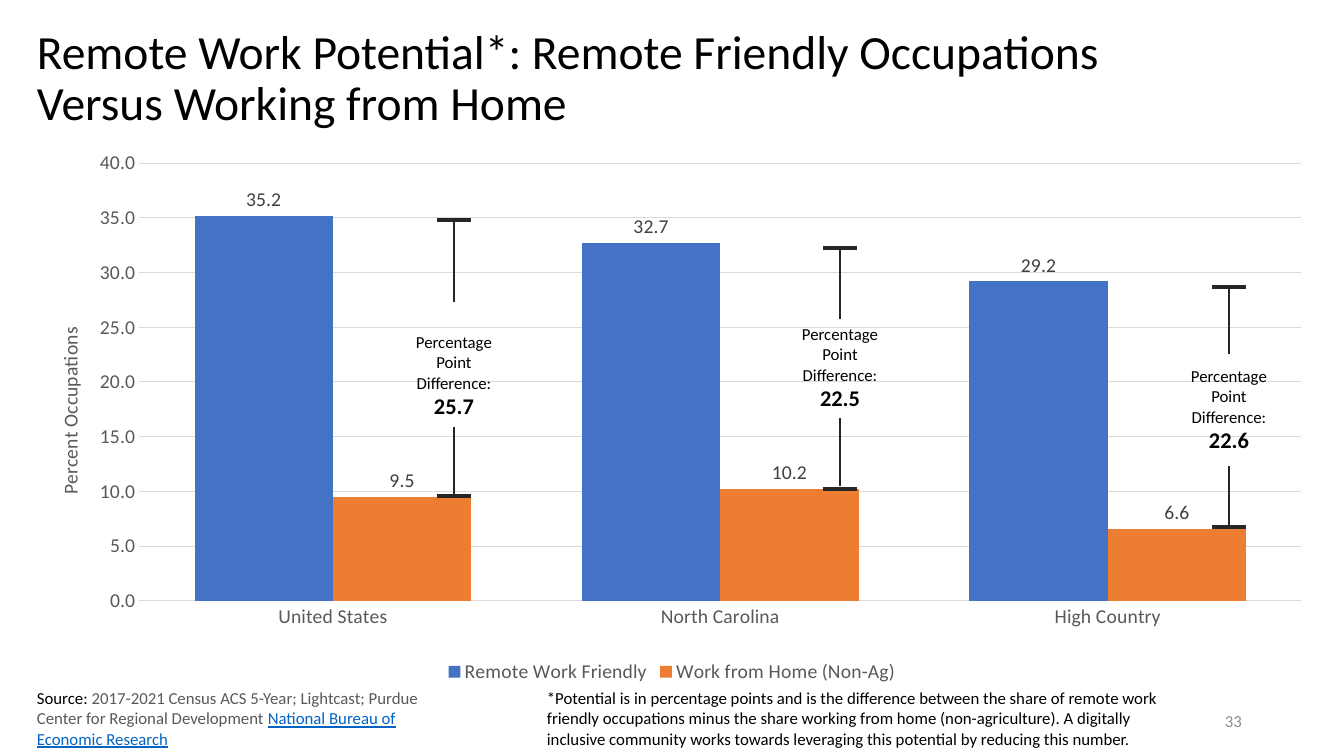
from dataclasses import dataclass

from lxml.etree import SubElement
from pptx import Presentation
from pptx.chart.data import CategoryChartData
from pptx.dml.color import RGBColor
from pptx.enum.chart import XL_CHART_TYPE as ChartType
from pptx.enum.chart import XL_LABEL_POSITION as LabelPosition
from pptx.enum.chart import XL_LEGEND_POSITION as LegendPosition
from pptx.enum.chart import XL_TICK_MARK as TickMark
from pptx.enum.shapes import MSO_CONNECTOR as Connector
from pptx.enum.text import MSO_ANCHOR as Anchor
from pptx.enum.text import MSO_AUTO_SIZE as AutoSize
from pptx.enum.text import PP_ALIGN as Align
from pptx.oxml.ns import qn
from pptx.util import Emu, Pt

EMU_PER_PX = 914400 / 100.8


@dataclass(frozen=True)
class Theme:
    font: str = "Calibri"
    black: str = "000000"
    axis_text: str = "595959"
    label_text: str = "404040"
    number_text: str = "8C8C8C"
    link: str = "0563C1"
    grid: str = "D9D9D9"
    bracket: str = "262626"
    remote: str = "4472C4"
    home: str = "ED7D31"
    title_size: int = 34
    value_size: int = 16
    chart_size: int = 14
    note_size: int = 12


THEME = Theme()

# Stem centre, top cap, upper stem end, text top, lower stem start and end, bottom cap
DIFFERENCES = [
    ("25.7", 454, 220, 302, 327, 427, 495, 496),
    ("22.5", 840, 248, 319, 319, 418, 486, 489),
    ("22.6", 1229, 287, 354, 361, 466, 527, 527),
]
CAP_HALF = 17
DIFFERENCE_WIDTH, DIFFERENCE_HEIGHT = 132, 99


def px(length):
    return Emu(round(length * EMU_PER_PX))


def assign(target, values):
    for name, value in values.items():
        setattr(target, name, value)


def style_font(font, size, color, **values):
    assign(font, {"name": THEME.font, "size": Pt(size), **values})
    font.color.rgb = RGBColor.from_string(color)


def style_line(line, color, width):
    line.color.rgb = RGBColor.from_string(color)
    line.width = Pt(width)


def add_text(slide, box, paragraphs, anchor=Anchor.TOP, fit=AutoSize.NONE, **paragraph_format):
    """Each paragraph is a list of (text, size, color, font values)."""
    shape = slide.shapes.add_textbox(*map(px, box))
    frame = shape.text_frame
    assign(frame, {"word_wrap": True, "vertical_anchor": anchor, "auto_size": fit})
    for index, runs in enumerate(paragraphs):
        paragraph = frame.paragraphs[0] if index == 0 else frame.add_paragraph()
        assign(paragraph, paragraph_format)
        for text, size, color, values in runs:
            for position, line in enumerate(text.split("\n")):
                if position:
                    paragraph.add_line_break()
                if line:
                    run = paragraph.add_run()
                    run.text = line
                    style_font(run.font, size, color, **values)
    return shape


def add_line(slide, start, end, width):
    line = slide.shapes.add_connector(Connector.STRAIGHT, *map(px, start + end))
    style_line(line.line, THEME.bracket, width)
    SubElement(line._element.spPr, qn("a:effectLst"))
    return line


def add_difference(slide, value, center, top, upper_end, text_top, lower_start, lower_end, bottom):
    size, color = THEME.note_size, THEME.black
    box = (center - DIFFERENCE_WIDTH // 2, text_top, DIFFERENCE_WIDTH, DIFFERENCE_HEIGHT)
    paragraphs = [
        [("Percentage\nPoint", size, color, {})],
        [("Difference:\n", size, color, {}), (value, THEME.value_size, color, {"bold": True})],
    ]
    label = add_text(slide, box, paragraphs, fit=AutoSize.SHAPE_TO_FIT_TEXT, alignment=Align.CENTER)
    for y in (bottom, top):
        add_line(slide, (center - CAP_HALF, y), (center + CAP_HALF, y), 3)
    upper = add_line(slide, (center, top), (center, upper_end), 1)
    lower = add_line(slide, (center, lower_start), (center, lower_end), 1)
    # Join the stems that touch the label
    if upper_end == text_top:
        upper.end_connect(label, 0)
    if lower_start == text_top + DIFFERENCE_HEIGHT:
        lower.begin_connect(label, 2)


def set_layout(parent, index, values):
    for old in parent.findall(qn("c:layout")):
        parent.remove(old)
    layout = SubElement(parent, qn("c:layout"))
    parent.insert(index, layout)
    manual = SubElement(layout, qn("c:manualLayout"))
    for name, value in values.items():
        SubElement(manual, qn(f"c:{name}")).set("val", str(value))


def style_axes(chart):
    category, value = chart.category_axis, chart.value_axis
    for axis in (category, value):
        assign(axis, {"major_tick_mark": TickMark.NONE, "minor_tick_mark": TickMark.NONE})
        style_font(axis.tick_labels.font, THEME.chart_size, THEME.axis_text)
    style_line(category.format.line, THEME.grid, 0.75)

    assign(value, {"minimum_scale": 0, "maximum_scale": 40, "major_unit": 5})
    assign(value.tick_labels, {"number_format": "0.0", "number_format_is_linked": False})
    value.format.line.fill.background()
    style_line(value.major_gridlines.format.line, THEME.grid, 0.75)

    title = value.axis_title
    paragraph = title.text_frame.paragraphs[0]
    run = paragraph.add_run()
    run.text = "Percent Occupations"
    style_font(run.font, THEME.chart_size, THEME.axis_text, bold=False)
    set_layout(title._element, 1, {"xMode": "edge", "yMode": "edge", "x": 0.02, "y": 0.33})


def add_occupation_chart(slide):
    data = CategoryChartData(number_format="0.0")
    data.categories = ["United States", "North Carolina", "High Country"]
    data.add_series("Remote Work Friendly", [35.2, 32.7, 29.2])
    data.add_series("Work from Home (Non-Ag)", [9.5, 10.2, 6.6])
    box = map(px, (27, 144, 1290, 544))
    chart = slide.shapes.add_chart(ChartType.COLUMN_CLUSTERED, *box, data).chart
    assign(chart, {"has_title": False, "has_legend": True})
    style_font(chart.font, THEME.chart_size, THEME.black)
    assign(chart.legend, {"position": LegendPosition.BOTTOM, "include_in_layout": False})
    style_font(chart.legend.font, THEME.chart_size, THEME.axis_text)

    plot = chart.plots[0]
    assign(plot, {"gap_width": 80, "overlap": 0, "vary_by_categories": False})
    for series, color in zip(plot.series, (THEME.remote, THEME.home)):
        series.format.fill.solid()
        series.format.fill.fore_color.rgb = RGBColor.from_string(color)
        labels = series.data_labels
        assign(labels, {"show_value": True, "position": LabelPosition.OUTSIDE_END,
                        "number_format": "0.0", "number_format_is_linked": False})
        style_font(labels.font, THEME.chart_size, THEME.label_text)
    style_axes(chart)
    set_layout(chart._chartSpace.chart.plotArea, 0, {
        "layoutTarget": "inner", "xMode": "edge", "yMode": "edge",
        "x": 0.087, "y": 0.035, "w": 0.901, "h": 0.805})


def main():
    presentation = Presentation()
    assign(presentation, {"slide_width": px(1344), "slide_height": px(756)})
    slide = presentation.slides.add_slide(presentation.slide_layouts[6])
    size = THEME.note_size

    # Title and slide number
    title = "Remote Work Potential*: Remote Friendly Occupations\nVersus Working from Home"
    add_text(slide, (27, 15, 1286, 129), [[(title, THEME.title_size, THEME.black, {})]],
             Anchor.MIDDLE, line_spacing=0.9)
    add_text(slide, (950, 701, 302, 40), [[("33", size, THEME.number_text, {})]],
             Anchor.MIDDLE, alignment=Align.RIGHT)

    # Chart with its difference brackets
    add_occupation_chart(slide)
    for difference in DIFFERENCES:
        add_difference(slide, *difference)

    # Source and footnote
    source = [
        ("Source: ", size, THEME.black, {}),
        ("2017-2021 Census ACS 5-Year; Lightcast; Purdue Center for Regional Development ",
         size, THEME.axis_text, {}),
        ("National Bureau of Economic Research", size, THEME.link, {"underline": True}),
    ]
    footnote = ("*Potential is in percentage points and is the difference between the share of "
                "remote work friendly occupations minus the share working from home "
                "(non-agriculture). A digitally inclusive community works towards leveraging "
                "this potential by reducing this number.")
    add_text(slide, (27, 683, 444, 72), [source], fit=AutoSize.SHAPE_TO_FIT_TEXT)
    add_text(slide, (537, 683, 659, 72), [[(footnote, size, THEME.black, {})]],
             fit=AutoSize.SHAPE_TO_FIT_TEXT)

    presentation.save("out.pptx")


if __name__ == "__main__":
    main()
